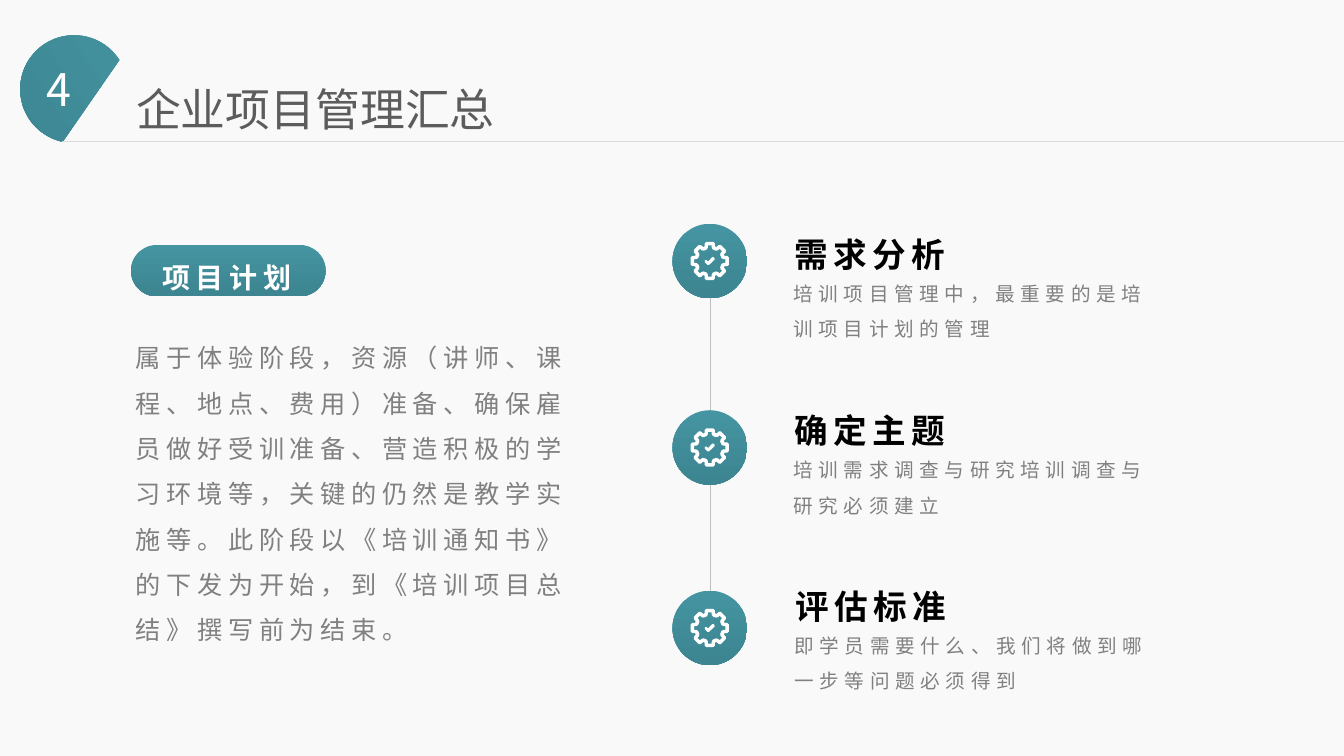
import math
from dataclasses import dataclass

import pptx
import pptx.dml.color
import pptx.enum.shapes
import pptx.enum.text
import pptx.oxml
import pptx.oxml.ns
import pptx.util

PX = 9144
FONT = "Noto Sans CJK JP"
TEAL = ("4594A1", "3C8591")
WHITE, BLACK, GREY = "FFFFFF", "000000", "808080"
SHAPE = pptx.enum.shapes.MSO_SHAPE

GEAR_OUTER = ((145, -52), (175, -50), (190, -35), (190, 35), (175, 50), (145, 52))
GEAR_INNER = ((115, -30), (135, -18), (155, -18), (155, 18), (135, 18), (115, 30))
CHECK = ((36, -40), (48, -28), (46, -12), (-8, 38), (-24, 38), (-50, 10),
         (-48, -8), (-34, -10), (-16, 4), (24, -38))


@dataclass
class Box:
    left: int
    top: int
    width: int
    height: int


@dataclass
class Style:
    size: int
    color: str
    bold: bool = False
    spacing: int = 0
    line: float = 1.0


@dataclass
class Step:
    icon_top: int
    left: int
    top: int
    heading: str
    body: str


NUMBER = Style(32, WHITE)
TITLE = Style(32, "5C5C5C")
PILL = Style(20, WHITE, True, 4, 1.5)
INTRO = Style(18, GREY, False, 4, 1.5)
HEADING = Style(24, BLACK, True, 4, 1.5)
BODY = Style(14, GREY, False, 4, 1.5)

STEPS = (
    Step(222, 778, 207, "需求分析", "培训项目管理中，最重要的是培训项目计划的管理"),
    Step(407, 778, 382, "确定主题", "培训需求调查与研究培训调查与研究必须建立"),
    Step(586, 779, 556, "评估标准", "即学员需要什么、我们将做到哪一步等问题必须得到"),
)
INTRO_TEXT = (
    "属于体验阶段，资源（讲师、课程、地点、费用）准备、确保雇员做好受训准备、"
    "营造积极的学习环境等，关键的仍然是教学实施等。此阶段以《培训通知书》的下发为开始，"
    "到《培训项目总结》撰写前为结束。"
)
ICON_LEFT, ICON_SIZE = 667, 74


def rgb(color: str) -> pptx.dml.color.RGBColor:
    return pptx.dml.color.RGBColor.from_string(color)


def place(sp, box: Box) -> None:
    sp.left, sp.top = box.left * PX, box.top * PX
    sp.width, sp.height = box.width * PX, box.height * PX


def fill_gradient(fill, colors: tuple[str, str], angle: int) -> None:
    fill.gradient()
    fill.gradient_angle = angle
    for stop, color in zip(fill.gradient_stops, colors):
        stop.color.rgb = rgb(color)


def write(sp, text: str, style: Style):
    tf = sp.text_frame
    tf.word_wrap = True
    tf.auto_size = pptx.enum.text.MSO_AUTO_SIZE.SHAPE_TO_FIT_TEXT
    tf.vertical_anchor = pptx.enum.text.MSO_ANCHOR.TOP
    p = tf.paragraphs[0]
    p.alignment = pptx.enum.text.PP_ALIGN.LEFT
    p.line_spacing = style.line
    r = p.add_run()
    r.text = text
    r.font.size = pptx.util.Pt(style.size)
    r.font.bold = style.bold
    r.font.color.rgb = rgb(style.color)
    r.font.name = FONT
    props = r.font._element
    props.set("spc", str(style.spacing * 100))
    ea = pptx.oxml.parse_xml(f'<a:ea {pptx.oxml.ns.nsdecls("a")} typeface="{FONT}"/>')
    props.find(pptx.oxml.ns.qn("a:latin")).addnext(ea)
    return r


def add_text(s, box: Box, text: str, style: Style) -> None:
    sp = s.shapes.add_textbox(0, 0, 0, 0)
    place(sp, box)
    write(sp, text, style)


def add_teal(s, kind, box: Box):
    sp = s.shapes.add_shape(kind, 0, 0, 0, 0)
    place(sp, box)
    sp.shadow.inherit = False
    sp.line.fill.background()
    fill_gradient(sp.fill, TEAL, 270)
    return sp


def add_line(s, x1: int, y1: int, x2: int, y2: int, color: str, width: float) -> None:
    cn = s.shapes.add_connector(
        pptx.enum.shapes.MSO_CONNECTOR.STRAIGHT, x1 * PX, y1 * PX, x2 * PX, y2 * PX)
    cn.line.color.rgb = rgb(color)
    cn.line.width = pptx.util.Pt(width)
    effects = pptx.oxml.parse_xml(f'<a:effectLst {pptx.oxml.ns.nsdecls("a")}/>')
    cn._element.spPr.append(effects)


def ring(tooth: tuple) -> list[tuple[int, int]]:
    points = []
    for i in range(8):
        c, n = math.cos(i * math.pi / 4), math.sin(i * math.pi / 4)
        points += [(round(r * c - t * n), round(r * n + t * c)) for r, t in tooth]
    return points


def add_gear(s, x: int, y: int) -> None:
    outer, inner = ring(GEAR_OUTER), ring(GEAR_INNER)[::-1]
    builder = s.shapes.build_freeform(*outer[0], scale=PX / 10)
    builder.add_line_segments(outer[1:], close=True)
    for contour in (inner, CHECK):
        builder.move_to(*contour[0])
        builder.add_line_segments(contour[1:], close=True)
    sp = builder.convert_to_shape(x * PX, y * PX)
    sp.shadow.inherit = False
    sp.fill.solid()
    sp.fill.fore_color.rgb = rgb(WHITE)
    sp.line.fill.background()


def main() -> None:
    """Build the project management summary slide."""
    prs = pptx.Presentation()
    prs.slide_width, prs.slide_height = 1333 * PX, 750 * PX
    s = prs.slides.add_slide(prs.slide_layouts[5])
    s.background.fill.solid()
    s.background.fill.fore_color.rgb = rgb("F9F9F9")

    badge = add_teal(s, SHAPE.CHORD, Box(20, 35, 107, 107))
    badge.rotation = 57.3
    add_line(s, 62, 140, 1333, 140, "D9D9D9", 0.5)
    place(s.shapes.title, Box(125, 76, 392, 64))
    r = write(s.shapes.title, "企业项目管理汇总", TITLE)
    fill_gradient(r.font.fill, ("5C5C5C", "2F2F31"), 180)
    add_text(s, Box(36, 56, 52, 64), "4", NUMBER)

    pill = add_teal(s, SHAPE.ROUNDED_RECTANGLE, Box(130, 243, 193, 51))
    pill.adjustments[0] = 0.5
    add_text(s, Box(151, 237, 172, 55), "项目计划", PILL)
    add_text(s, Box(125, 320, 468, 323), INTRO_TEXT, INTRO)

    middle = ICON_LEFT + ICON_SIZE // 2
    add_line(s, middle, STEPS[0].icon_top + ICON_SIZE, middle, STEPS[-1].icon_top, "BFBFBF", 0.25)
    for step in STEPS:
        add_teal(s, SHAPE.OVAL, Box(ICON_LEFT, step.icon_top, ICON_SIZE, ICON_SIZE))
        add_gear(s, middle, step.icon_top + ICON_SIZE // 2)
        add_text(s, Box(step.left, step.top, 187, 64), step.heading, HEADING)
        add_text(s, Box(step.left - 1, step.top + 56, 392, 77), step.body, BODY)

    prs.save("out.pptx")


if __name__ == "__main__":
    main()
